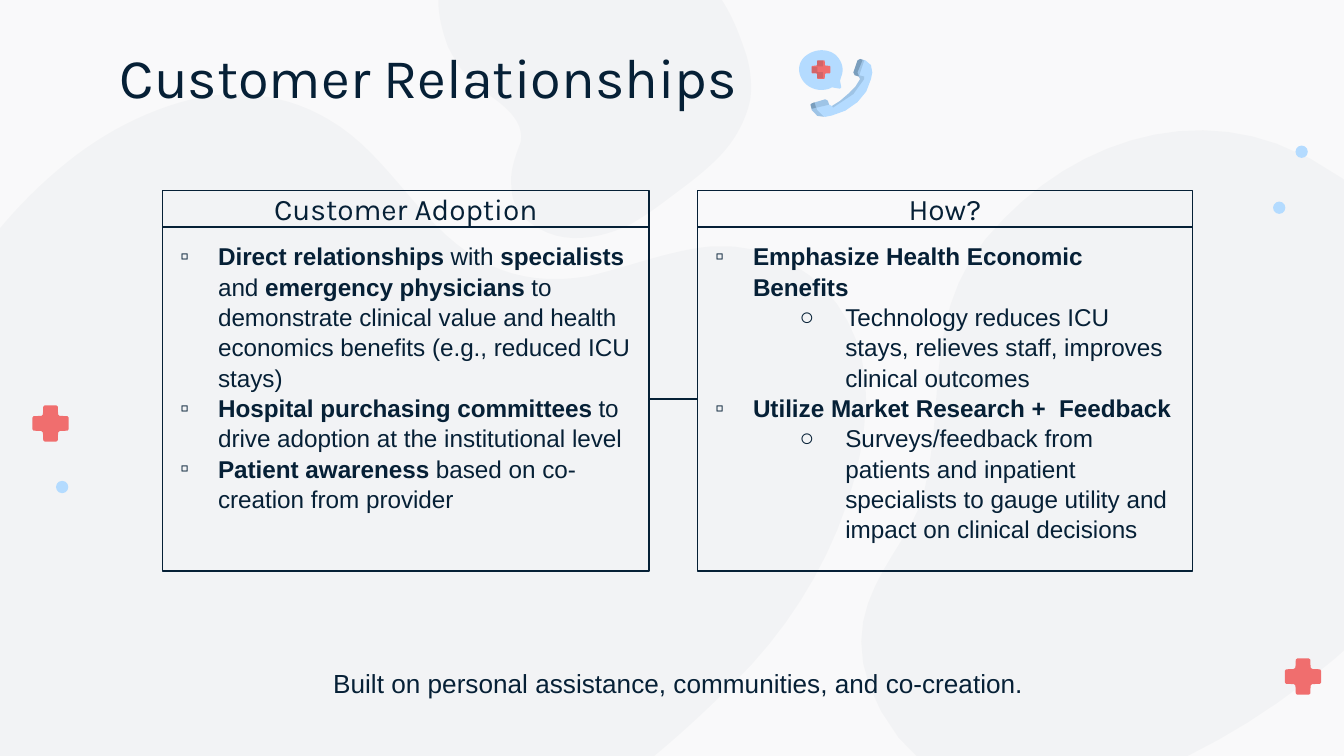
from pptx import Presentation
from pptx.dml.color import RGBColor
from pptx.enum.shapes import MSO_CONNECTOR, MSO_SHAPE
from pptx.enum.text import MSO_ANCHOR, MSO_AUTO_SIZE, PP_ALIGN
from pptx.oxml.ns import qn
from pptx.util import Pt
from lxml.etree import SubElement

HEX = {"paper": "F9F9FA", "blob": "BEC3C9", "ink": "062036",
       "sky": "B4DBFF", "red": "F06E6E"}

FRAME = {"word_wrap": True, "auto_size": MSO_AUTO_SIZE.NONE,
         "margin_left": Pt(7.2), "margin_right": Pt(7.2),
         "margin_top": Pt(7.2), "margin_bottom": Pt(7.2)}
PARA = {"space_before": Pt(0), "space_after": Pt(0)}
FONTS = {"title": {"name": "Karla", "size": Pt(30), "bold": False},
         "head": {"name": "Karla", "size": Pt(16), "bold": False},
         "list": {"name": "Arial", "size": Pt(13)},
         "note": {"name": "Arial", "size": Pt(14), "bold": False}}
# Bullet sign, left indent and hanging indent of each list level
BULLETS = [("▫", 22.5, -20.2), ("○", 72, -24.5)]

# Closed curves: a start point, then three Bezier points per segment
BLOBS = [
    [(253, -32), (249, -30), (247, -28), (244, -25), (239, -19), (235, -12),
     (235, -4), (234, 6), (237, 17), (240, 25), (245, 35), (251, 44),
     (261, 50), (269, 56), (281, 64), (279, 76), (276, 84), (273, 92),
     (274, 100), (274, 109), (279, 116), (285, 120), (301, 132), (322, 128),
     (338, 120), (347, 115), (356, 108), (364, 102), (372, 96), (381, 89),
     (388, 81), (395, 73), (400, 63), (402, 53), (403, 45), (402, 37),
     (400, 30), (396, 18), (392, 7), (384, -4), (373, -19), (359, -30),
     (343, -38), (326, -45), (307, -48), (289, -46), (276, -45), (263, -40),
     (253, -32)],
    [(41, 83), (20, 99), (2, 118), (-12, 138), (-30, 165), (-40, 196),
     (-49, 225), (-59, 258), (-57, 287), (-48, 318), (-40, 349), (-26, 379),
     (-6, 405), (1, 415), (9, 426), (19, 434), (35, 451), (54, 466),
     (76, 476), (127, 499), (185, 500), (237, 476), (270, 461), (302, 442),
     (333, 419), (354, 403), (374, 385), (393, 366), (433, 327), (462, 271),
     (464, 215), (465, 168), (431, 129), (381, 132), (359, 134), (337, 143),
     (315, 148), (285, 153), (261, 146), (239, 126), (217, 106), (202, 79),
     (176, 64), (156, 52), (132, 48), (108, 52), (84, 57), (61, 68),
     (41, 83)],
    [(623, 411), (680, 387), (757, 329), (788, 263), (817, 201), (757, 103),
     (684, 77), (632, 58), (576, 78), (538, 117), (492, 162), (508, 210),
     (495, 264), (487, 297), (441, 325), (472, 381), (506, 444), (584, 428),
     (623, 411)],
]

# Phone parts, measured from the corner of the icon
EAR = [(32.4, 5), (31, 5.8), (28.8, 12.2), (29.5, 13.7), (31.7, 14.4)]
INNER = [(32.4, 15.8), (29.9, 19.8), (25.9, 23.8), (21.6, 27.5), (17.3, 30.2)]
MOUTH = [(15.8, 29.5), (15.1, 27.4), (13.7, 26.6), (6.5, 28.8), (5.8, 29.5)]
OUTER = [(6.5, 32.4), (9.5, 35.5), (13.7, 36), (17.3, 35.3), (24.5, 32.7),
         (31, 28.1), (35.7, 22.4), (38.2, 15.8), (38.9, 12.2), (38.2, 8.3),
         (35.3, 5.8)]
SHADES = [
    EAR + INNER + [(18, 31), (28.8, 23.8), (34.6, 15.8), (34.6, 14.4),
                   (31.7, 13.7), (31, 12.2), (33.8, 5.4)],
    EAR + [(34.6, 5.8)],
    EAR + [(31, 12.2), (33.8, 5.4)],
    MOUTH + [(6.5, 31.7)],
    [(7.9, 28.1), (6.5, 28.8), (5.8, 29.5), (6.5, 32.4), (9.5, 35.5),
     (13, 36), (9.4, 32.4)],
    [(7.9, 28.1), (6.5, 28.8), (5.8, 29.5), (6.5, 31.7), (8.6, 31)],
] + [[(x, y), (x + 3, y), (x + 3, y + 3.2), (x, y + 3.2)]
     for x, y in ((9.4, 5.8), (9.4, 12), (6.5, 9.2))]
BUBBLE = ([(2.9, 3.6), (-1.4, 7.2), (-1.4, 13.7), (2.9, 18),
           (6.5, 21.6), (11.5, 22.3), (15.8, 20.9)],
          [(17.3, 20.2), (21.6, 20.9), (22.3, 20.2), (21.6, 16.6)],
          [(22.3, 14.4), (23.8, 10.8), (23, 6.5), (19.4, 2.9),
           (15.1, -0.7), (7.9, -0.7), (2.9, 3.6)])
# One quarter of a soft-cornered cross of size 1, centred on zero
ARM = [(.16, -.5), (.2, -.47), (.21, -.25), (.25, -.21), (.47, -.2), (.5, -.16)]

ADOPT = [(0, "**Direct relationships** with **specialists **and **emergency "
             "physicians** to demonstrate clinical value and health economics "
             "benefits (e.g., reduced ICU stays)"),
         (0, "**Hospital purchasing committees **to drive adoption at the "
             "institutional level"),
         (0, "**Patient awareness **based on co-creation from provider")]
HOW = [(0, "**Emphasize Health Economic Benefits**"),
       (1, "Technology reduces ICU stays, relieves staff, improves clinical "
           "outcomes"),
       (0, "**Utilize Market Research +  Feedback**"),
       (1, "Surveys/feedback from patients and inpatient specialists to gauge "
           "utility and impact on clinical decisions")]


def color(name):
    return RGBColor.from_string(HEX[name])


def apply(item, form):
    for key, value in form.items():
        setattr(item, key, value)


def place(shape, box):
    apply(shape, dict(zip(("left", "top", "width", "height"), map(Pt, box))))


def paint(shape, name, alpha=None):
    shape.shadow.inherit = False
    shape.fill.solid()
    shape.fill.fore_color.rgb = color(name)
    shape.line.fill.background()
    if alpha:
        tint = shape.element.find(".//" + qn("a:srgbClr"))
        SubElement(tint, qn("a:alpha"), val=str(alpha * 1000))


def curve(pts, steps=12):
    out = [pts[0]]
    for i in range(0, len(pts) - 1, 3):
        for n in range(1, steps + 1):
            t = n / steps
            mix = ((1 - t) ** 3, 3 * t * (1 - t) ** 2, 3 * t * t * (1 - t), t ** 3)
            out.append(tuple(sum(m * p[k] for m, p in zip(mix, pts[i:i + 4]))
                             for k in (0, 1)))
    return out


def trace(shapes, pts, name, alpha=None, left=0, top=0):
    dots = [(Pt(left + x), Pt(top + y)) for x, y in pts]
    pen = shapes.build_freeform(*dots[0], scale=1.0)
    pen.add_line_segments(dots[1:], close=True)
    paint(pen.convert_to_shape(), name, alpha)


def cross(shapes, left, top, size):
    pts, part = [], ARM
    for _ in range(4):
        pts += part
        part = [(-y, x) for x, y in part]
    half = size / 2
    trace(shapes, [(size * x, size * y) for x, y in pts], "red",
          left=left + half, top=top + half)


def write(shape, lines, kind, align=PP_ALIGN.LEFT, anchor=MSO_ANCHOR.TOP):
    frame = shape.text_frame
    apply(frame, {**FRAME, "vertical_anchor": anchor})
    for i, (level, text) in enumerate(lines):
        para = frame.add_paragraph() if i else frame.paragraphs[0]
        apply(para, {**PARA, "alignment": align, "level": level})
        if kind == "list":
            para.line_spacing = 1.04
            sign, left, hang = BULLETS[level]
            props = para._p.get_or_add_pPr()
            props.set("marL", str(Pt(left)))
            props.set("indent", str(Pt(hang)))
            tint = SubElement(props, qn("a:buClr"))
            SubElement(tint, qn("a:srgbClr"), val=HEX["ink"])
            SubElement(props, qn("a:buFont"), typeface="Arial")
            SubElement(props, qn("a:buChar"), char=sign)
        for n, part in enumerate(text.split("**")):
            if part:
                run = para.add_run()
                run.text = part
                apply(run.font, {"bold": n % 2 == 1, **FONTS[kind]})
                run.font.color.rgb = color("ink")


def backdrop(slide):
    group = slide.shapes.add_group_shape()
    for blob in BLOBS:
        trace(group.shapes, curve(blob), "blob", 10)
    for left, top in ((17.4, 217.2), (688.4, 352.8)):
        cross(group.shapes, left, top, 19.4)
    for left, top in ((30, 257.6), (694, 78), (682, 108)):
        dot = group.shapes.add_shape(MSO_SHAPE.OVAL, Pt(left), Pt(top),
                                     Pt(6.6), Pt(6.6))
        paint(dot, "sky")
    # Behind the placeholders
    group.element.getparent().insert(2, group.element)


def card(head, body, box, title, lines):
    left, top, width, height = box
    bar = 19.4
    place(head, (left, top, width, bar))
    place(body, (left, top + bar, width, height - bar))
    for part in (head, body):
        part.line.color.rgb = color("ink")
        part.line.width = Pt(0.75)
    write(head, [(0, title)], "head", PP_ALIGN.CENTER, MSO_ANCHOR.MIDDLE)
    write(body, lines, "list")


def link(slide, start, end, y):
    line = slide.shapes.add_connector(MSO_CONNECTOR.STRAIGHT, Pt(start), Pt(y),
                                      Pt(end), Pt(y))
    line.line.color.rgb = color("ink")
    line.line.width = Pt(0.75)
    SubElement(line.element.spPr, qn("a:effectLst"))


def icon(slide, left, top):
    shapes = slide.shapes.add_group_shape().shapes
    trace(shapes, EAR + INNER + MOUTH + OUTER, "sky", None, left, top)
    first, tail, last = BUBBLE
    trace(shapes, curve(first) + tail + curve(last), "sky", None, left, top)
    cross(shapes, left + 6.4, top + 5.7, 10)
    for part in SHADES:
        trace(shapes, part, "ink", 12, left, top)


def main():
    deck = Presentation()
    apply(deck, {"slide_width": Pt(720), "slide_height": Pt(405)})
    slide = deck.slides.add_slide(deck.slide_layouts.get_by_name("Comparison"))
    slide.background.fill.solid()
    slide.background.fill.fore_color.rgb = color("paper")
    backdrop(slide)

    # Title
    title, *parts = slide.placeholders
    place(title, (57, 18.7, 607, 44.6))
    write(title, [(0, "Customer Relationships")], "title",
          anchor=MSO_ANCHOR.MIDDLE)

    # Two linked cards
    card(*parts[:2], (87.1, 102.2, 260.6, 203.8), "Customer Adoption", ADOPT)
    card(*parts[2:], (373.7, 102.2, 265, 203.8), "How?", HOW)
    link(slide, 347.7, 373.7, 213.8)
    icon(slide, 428.4, 26.6)

    # Closing line
    note = slide.shapes.add_textbox(Pt(171.4), Pt(350.6), Pt(394.6), Pt(31.7))
    write(note, [(0, "Built on personal assistance, communities, and "
                     "co-creation.")], "note")
    deck.save("out.pptx")


if __name__ == "__main__":
    main()
